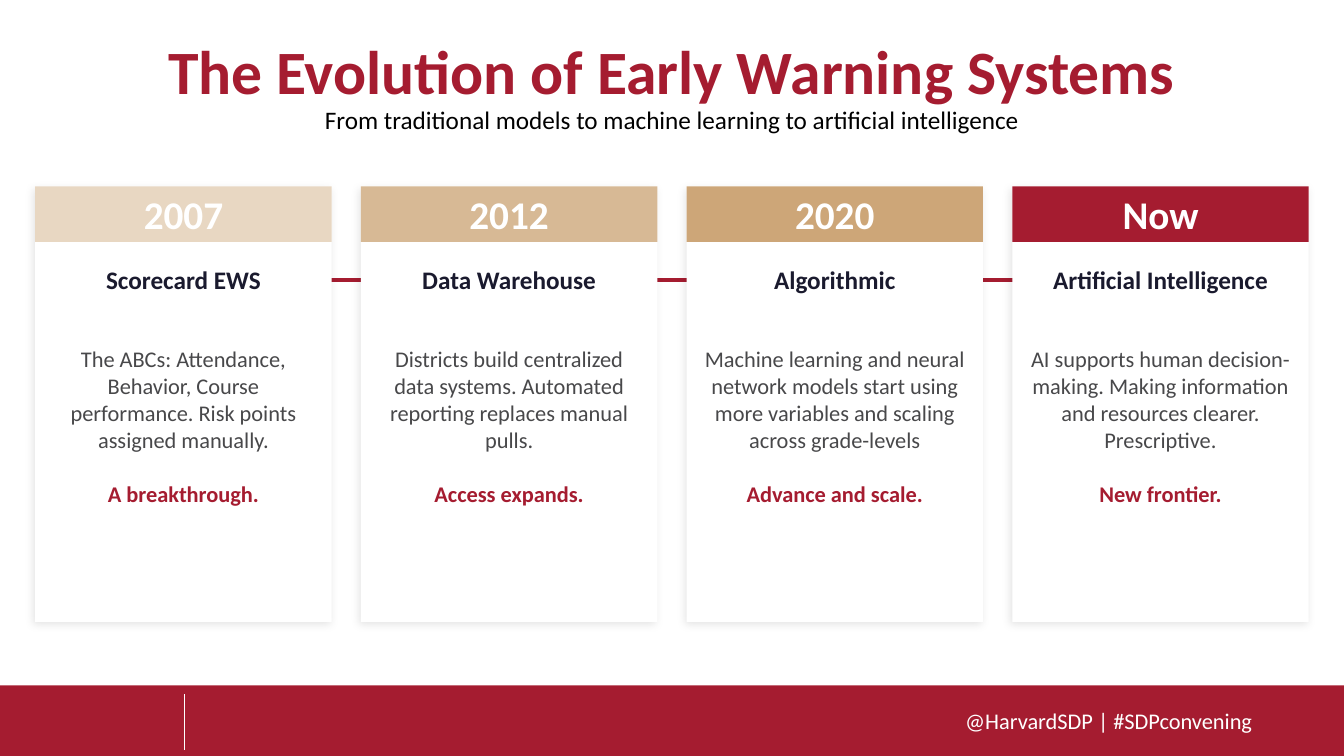
from lxml.etree import SubElement as Sub
from pptx import Presentation
from pptx.dml.color import RGBColor as Rgb
from pptx.enum.shapes import MSO_CONNECTOR as Conn, MSO_SHAPE as Shape
from pptx.enum.text import MSO_ANCHOR as Anchor, MSO_AUTO_SIZE as Fit, PP_ALIGN as Align
from pptx.oxml.ns import qn
from pptx.util import Inches, Pt

TITLE = "The Evolution of Early Warning Systems"
LEAD = "From traditional models to machine learning to artificial intelligence"
TAG = "@HarvardSDP | #SDPconvening"
CARDS = [
    ("2007", "sand", "Scorecard EWS",
     "The ABCs: Attendance, Behavior, Course performance. Risk points assigned manually.",
     "A breakthrough."),
    ("2012", "tan", "Data Warehouse",
     "Districts build centralized data systems. Automated reporting replaces manual pulls.",
     "Access expands."),
    ("2020", "gold", "Algorithmic",
     "Machine learning and neural network models start using more variables and scaling across grade-levels",
     "Advance and scale."),
    ("Now", "red", "Artificial Intelligence",
     "AI supports human decision-making. Making information and resources clearer. Prescriptive.",
     "New frontier."),
]
HUES = {"red": "A51C30", "sand": "E8D7C2", "tan": "D7B995", "gold": "CDA678",
        "white": "FFFFFF", "black": "000000", "navy": "1A1A2E", "gray": "48484A"}
FONT = "Calibri"
WIDE, HIGH = 13.33, 7.5
EDGE, GAP, TOP, TALL = 0.35, 0.29, 1.85, 4.32
CARD = (WIDE - 2 * EDGE - 3 * GAP) / 4
STEP = CARD + GAP
HEAD, PAD = 0.55, 0.15

deck = Presentation()
deck.slide_width, deck.slide_height = Inches(WIDE), Inches(HIGH)
slide = deck.slides.add_slide(deck.slide_layouts[1])


def hue(name):
    return Rgb.from_string(HUES[name])


def place(item, *box):
    item.left, item.top, item.width, item.height = map(Inches, box)


def write(para, text, size, color, bold=False, align=Align.CENTER):
    para.alignment = align
    run = para.add_run()
    run.text = text
    font = run.font
    font.name, font.size, font.bold = FONT, Pt(size), bold
    font.color.rgb = hue(color)


def block(home, box, color):
    rect = home.add_shape(Shape.RECTANGLE, *map(Inches, box))
    rect.shadow.inherit = False
    rect.fill.solid()
    rect.fill.fore_color.rgb = hue(color)
    rect.line.fill.background()
    return rect


def frame(item, inset=0):
    body = item.text_frame
    body.word_wrap = True
    body.vertical_anchor = Anchor.MIDDLE
    body.margin_left = body.margin_right = Inches(inset)
    body.margin_top = body.margin_bottom = Inches(inset / 2)
    return body


def label(home, box):
    return frame(home.add_textbox(*map(Inches, box)))


def rule(x1, y1, x2, y2, color, width):
    line = slide.shapes.add_connector(Conn.STRAIGHT, *map(Inches, (x1, y1, x2, y2)))
    line.line.color.rgb = hue(color)
    line.line.width = Pt(width)
    Sub(line._element.spPr, qn("a:effectLst"))


def shade(rect):
    glow = Sub(rect._element.spPr.find(qn("a:effectLst")), qn("a:outerShdw"),
               blurRad=str(Pt(6)), dist=str(Pt(2)), dir=str(135 * 60000),
               algn="bl", rotWithShape="0")
    tint = Sub(glow, qn("a:srgbClr"), val=HUES["black"])
    Sub(tint, qn("a:alpha"), val="10000")


def card(spot, year, color, name, text, punch):
    left = EDGE + spot * STEP
    home = slide.shapes.add_group_shape().shapes
    shade(block(home, (left, TOP, CARD, TALL), "white"))
    head = block(home, (left, TOP, CARD, HEAD), color)
    write(frame(head).paragraphs[0], year, 28, "white", True)
    write(label(home, (left, 2.55, CARD, 0.45)).paragraphs[0], name, 18, "navy", True)
    body = label(home, (left + PAD, 3, CARD - 2 * PAD, 2.46))
    write(body.paragraphs[0], text, 16, "gray")
    last = body.add_paragraph()
    last.space_before = Pt(19.5)
    write(last, punch, 16, "red", True)


title, lead = slide.shapes.title, slide.placeholders[1]
place(title, 0, 0.28, WIDE, 0.91)
place(lead, 0, 1.02, WIDE, 0.65)
for item, text, size, color, bold in ((title, TITLE, 44, "red", True),
                                      (lead, LEAD, 18, "black", False)):
    body = frame(item, 0.1)
    body.auto_size = Fit.NONE
    para = body.paragraphs[0]
    props = para._p.get_or_add_pPr()
    props.set("marL", "0")
    props.set("indent", "0")
    Sub(props, qn("a:buNone"))
    para.line_spacing, para.space_before = 0.9, Pt(0)
    write(para, text, size, color, bold)
lead.text_frame.vertical_anchor = Anchor.TOP

block(slide.shapes, (0, 6.8, WIDE, HIGH - 6.8), "red")
rule(1.83, 6.89, 1.83, 7.44, "white", 0.5)
tag = label(slide.shapes, (8.39, 6.95, 4.03, 0.4))
write(tag.paragraphs[0], TAG, 16, "white", align=Align.RIGHT)

rule(EDGE + CARD / 2, 2.78, WIDE - EDGE - CARD / 2, 2.78, "red", 3)
for spot, entry in enumerate(CARDS):
    card(spot, *entry)

deck.save("out.pptx")
